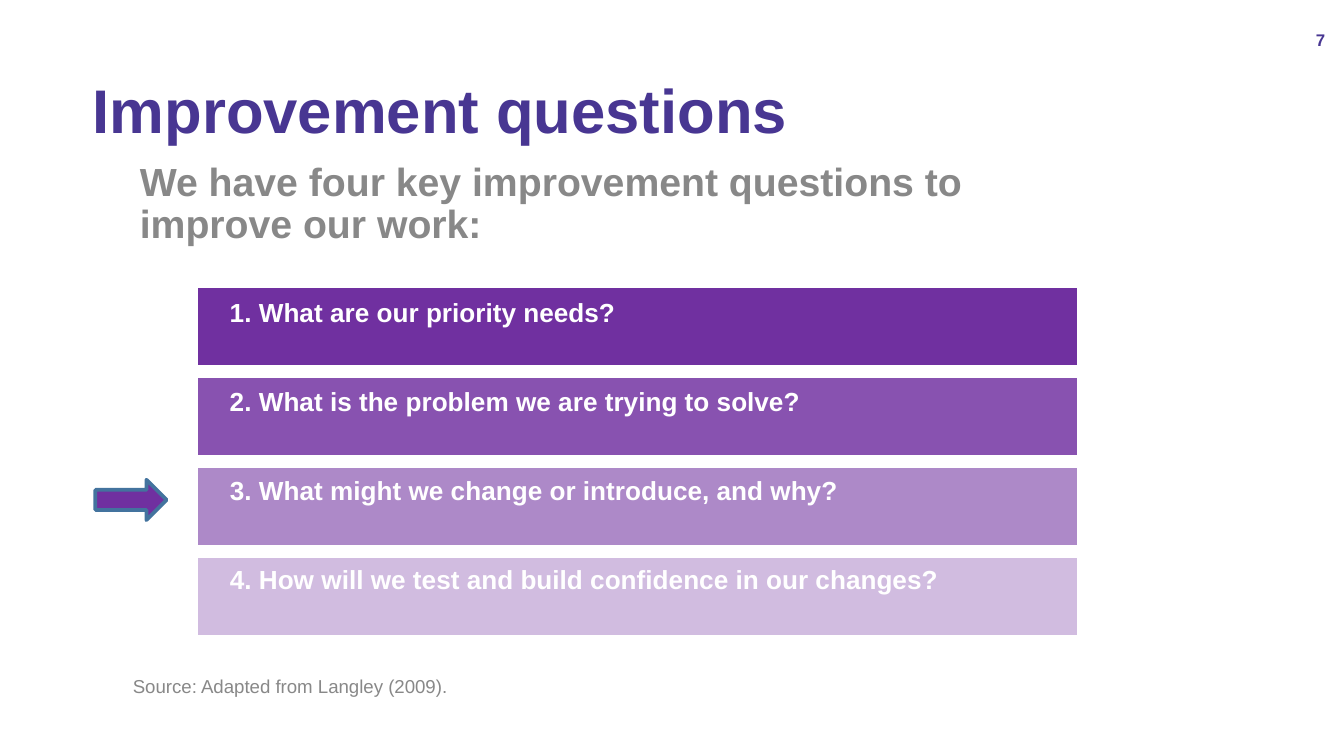
from dataclasses import dataclass
from lxml import etree
from pptx import Presentation
from pptx import util as u
from pptx.dml.color import RGBColor
from pptx.enum import shapes, text
from pptx.oxml.ns import qn


@dataclass(frozen=True)
class Theme:
    font: str = "Arial"
    title: str = "483692"
    bar: str = "7030A0"
    edge: str = "43739E"
    grey: str = "888888"
    white: str = "FFFFFF"
    head: int = 33
    lead: int = 21
    item: int = 14
    note: int = 10
    page: int = 9
    line: int = 2


@dataclass(frozen=True)
class Box:
    col: float
    row: float
    cols: float
    rows: float

    def place(self) -> tuple[int, ...]:
        return tuple(round(n * CELL) for n in (self.col, self.row, self.cols, self.rows))


@dataclass(frozen=True)
class Style:
    size: int
    color: str
    bold: bool = True
    indent: float = 0
    spacing: float = 1
    middle: bool = False
    right: bool = False
    inset: tuple[float, ...] = (0, 0.4, 0.7, 0.4)


@dataclass(frozen=True)
class Question:
    words: str
    alpha: int
    cols: float


THEME = Theme()
WIDTH = u.Inches(10)
HEIGHT = WIDTH * 9 // 16
CELL = WIDTH / 100
BAR = Box(14.6, 21.3, 65.7, 6)
BAR_PITCH = 6.7
LABEL_TOP, LABEL_ROWS, LABEL_PITCH = 21.9, 4.3, 6.64

QUESTIONS = [
    Question("1. What are our priority needs?", 100, 51.4),
    Question("2. What is the problem we are trying to solve?", 83, 51.4),
    Question("3. What might we change or introduce, and why?", 57, 62.9),
    Question("4. How will we test and build confidence in our changes?", 32, 61.9),
]


def add_text(parent, box: Box, words: str, style: Style) -> None:
    frame = parent.add_textbox(*box.place()).text_frame
    frame.word_wrap = True
    left, top, right, bottom = (round(n * CELL) for n in style.inset)
    frame.margin_left, frame.margin_top = left, top
    frame.margin_right, frame.margin_bottom = right, bottom
    anchor = text.MSO_ANCHOR
    frame.vertical_anchor = anchor.MIDDLE if style.middle else anchor.TOP
    para = frame.paragraphs[0]
    para.text = words
    para.line_spacing = style.spacing
    para.alignment = text.PP_ALIGN.RIGHT if style.right else text.PP_ALIGN.LEFT
    if style.indent:
        props = para._p.get_or_add_pPr()
        props.set("marL", str(round(style.indent * CELL)))
        props.set("indent", "0")
    font = para.font
    font.name, font.size, font.bold = THEME.font, u.Pt(style.size), style.bold
    font.color.rgb = RGBColor.from_string(style.color)


def add_form(parent, kind, box: Box, edge: str, alpha: int = 100) -> None:
    shape = parent.add_shape(kind, *box.place())
    shape.shadow.inherit = False
    shape.fill.solid()
    shape.fill.fore_color.rgb = RGBColor.from_string(THEME.bar)
    shape.line.color.rgb = RGBColor.from_string(edge)
    shape.line.width = u.Pt(THEME.line)
    if alpha < 100:
        color = shape.fill._xPr.find(qn("a:solidFill"))[0]
        etree.SubElement(color, qn("a:alpha")).set("val", str(alpha * 1000))


def add_list(parent) -> None:
    style = Style(THEME.item, THEME.white, indent=2.5, spacing=0.9)
    for i, ask in enumerate(QUESTIONS):
        bar = Box(BAR.col, BAR.row + i * BAR_PITCH, BAR.cols, BAR.rows)
        label = Box(BAR.col, LABEL_TOP + i * LABEL_PITCH, ask.cols, LABEL_ROWS)
        add_form(parent, shapes.MSO_SHAPE.RECTANGLE, bar, THEME.white, ask.alpha)
        add_text(parent, label, ask.words, style)


def main() -> None:
    deck = Presentation()
    deck.slide_width, deck.slide_height = WIDTH, HEIGHT
    tree = deck.slides.add_slide(deck.slide_layouts[6]).shapes

    add_text(tree, Box(7.9, 11.7, 86.2, 35.7),
             "We have four key improvement questions to\vimprove our work:",
             Style(THEME.lead, THEME.grey, indent=2.5, spacing=0.9))
    add_text(tree, Box(6.9, 3, 86.2, 10.9), "Improvement questions",
             Style(THEME.head, THEME.title, spacing=0.9, middle=True))
    add_text(tree, Box(8.9, 49.4, 58.3, 6.3), "Source: Adapted from Langley (2009).",
             Style(THEME.note, THEME.grey, bold=False, inset=(1, 1, 1, 1)))
    add_list(tree.add_group_shape().shapes)
    add_text(tree, Box(95.1, 1.5, 4.2, 3), "7",
             Style(THEME.page, THEME.title, middle=True, right=True,
                   inset=(0.7, 0.4, 0.7, 0.4)))
    add_form(tree, shapes.MSO_SHAPE.RIGHT_ARROW, Box(7.1, 35.7, 5.3, 3), THEME.edge)
    deck.save("out.pptx")


if __name__ == "__main__":
    main()
